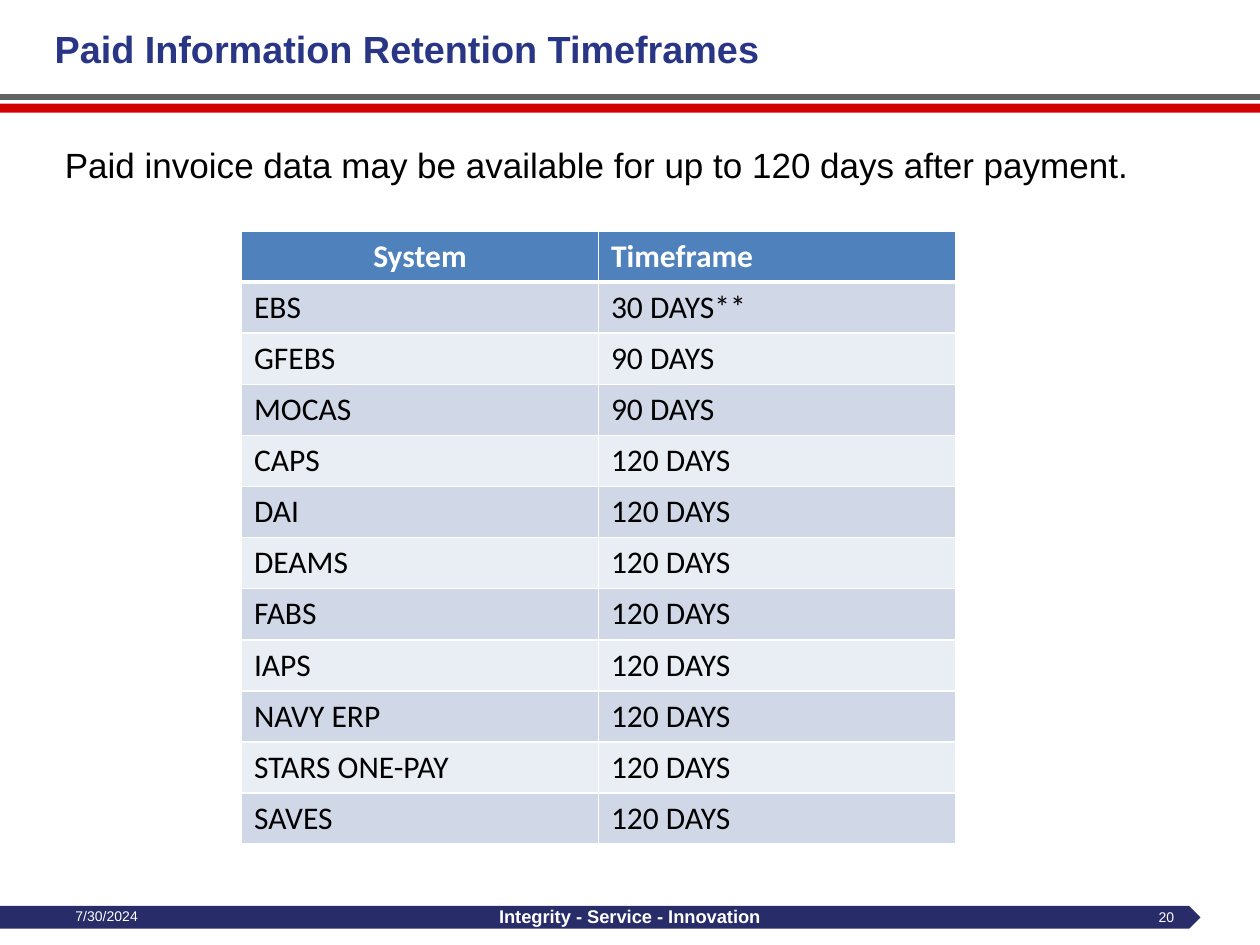
from lxml.etree import SubElement as Sub
from pptx import Presentation
from pptx.dml.color import RGBColor
from pptx.enum.shapes import MSO_CONNECTOR as Link, MSO_SHAPE as Kind
from pptx.enum.text import MSO_ANCHOR as Anchor, MSO_AUTO_SIZE as Fit, PP_ALIGN as Align
from pptx.oxml import parse_xml
from pptx.oxml.ns import nsdecls, qn
from pptx.util import Pt

WHITE = "FFFFFF"
NAVY = "282C69"
RED = "D20000"
GRAY = "626364"
BLUE = "293685"
HEAD = "4F81BD"
BANDS = ("D0D8E8", "E9EDF4")

ROWS = [
    ("System", "Timeframe"),
    ("EBS", "30 DAYS**"),
    ("GFEBS", "90 DAYS"),
    ("MOCAS", "90 DAYS"),
    ("CAPS", "120 DAYS"),
    ("DAI", "120 DAYS"),
    ("DEAMS", "120 DAYS"),
    ("FABS", "120 DAYS"),
    ("IAPS", "120 DAYS"),
    ("NAVY ERP", "120 DAYS"),
    ("STARS ONE-PAY", "120 DAYS"),
    ("SAVES", "120 DAYS"),
]


def color(code):
    return RGBColor.from_string(code)


def edge(tag, width):
    line = parse_xml(f'<a:{tag} {nsdecls("a")} w="{Pt(width)}"/>')
    fill = Sub(line, qn("a:solidFill"))
    Sub(fill, qn("a:srgbClr"), val=WHITE)
    return line


class Deck:
    def __init__(self, wide, high, face):
        self.show = Presentation()
        self.show.slide_width = Pt(wide)
        self.show.slide_height = Pt(high)
        self.slide = self.show.slides.add_slide(self.show.slide_layouts[5])
        self.shapes = self.slide.shapes
        self.face = face

    def style(self, para, text, size, code, bold=False, align=Align.LEFT, face=None):
        para.text = text
        para.alignment = align
        font = para.font
        font.name = face or self.face
        font.size = Pt(size)
        font.bold = bold
        font.color.rgb = color(code)

    def title(self, text, left, top, wide, high, size, code):
        box = self.shapes.title
        box.left, box.top, box.width, box.height = map(Pt, (left, top, wide, high))
        frame = box.text_frame
        frame.auto_size = Fit.NONE
        frame.vertical_anchor = Anchor.MIDDLE
        self.style(frame.paragraphs[0], text, size, code, bold=True)

    def text(self, text, left, top, wide, high, size, code, **look):
        box = self.shapes.add_textbox(*map(Pt, (left, top, wide, high)))
        frame = box.text_frame
        frame.word_wrap = True
        frame.vertical_anchor = Anchor.MIDDLE
        frame.margin_top = frame.margin_bottom = 0
        self.style(frame.paragraphs[0], text, size, code, **look)

    def shape(self, kind, left, top, wide, high, code):
        item = self.shapes.add_shape(kind, *map(Pt, (left, top, wide, high)))
        item.shadow.inherit = False
        item.fill.solid()
        item.fill.fore_color.rgb = color(code)
        item.line.fill.background()

    def rule(self, left, right, top, code, width):
        item = self.shapes.add_connector(Link.STRAIGHT, Pt(left), Pt(top), Pt(right), Pt(top))
        item.line.color.rgb = color(code)
        item.line.width = Pt(width)
        Sub(item._element.spPr, qn("a:effectLst"))

    def table(self, rows, left, top, wide, high, size, face):
        grid = self.shapes.add_table(
            len(rows), len(rows[0]), *map(Pt, (left, top, wide, high))
        ).table
        for row in grid.rows:
            row.height = Pt(high / len(rows))
        for i, row in enumerate(rows):
            for j, text in enumerate(row):
                cell = grid.cell(i, j)
                head = i == 0
                align = Align.CENTER if head and j == 0 else Align.LEFT
                self.style(cell.text_frame.paragraphs[0], text, size,
                           WHITE if head else "000000", head, align, face)
                props = cell._tc.get_or_add_tcPr()
                props.append(edge("lnL", 1))
                props.append(edge("lnR", 1))
                props.append(edge("lnT", 3 if i == 1 else 1))
                props.append(edge("lnB", 3 if head else 1))
                cell.fill.solid()
                cell.fill.fore_color.rgb = color(HEAD if head else BANDS[(i - 1) % 2])


def main():
    deck = Deck(720, 540, "Arial")
    deck.shape(Kind.PENTAGON, 0, 517.7, 686, 13, NAVY)
    deck.shape(Kind.RECTANGLE, -0.5, 59.2, 721, 5.2, RED)
    deck.rule(0, 720, 55.5, GRAY, 3.25)
    deck.title("Paid Information Retention Timeframes", 24, 12.5, 672, 30, 21.6, BLUE)
    deck.text("7/30/2024", 36, 517, 168, 13, 8, WHITE)
    deck.text("Integrity - Service - Innovation", 246, 517, 228, 13, 10.5, WHITE,
              bold=True, align=Align.CENTER)
    deck.text("20", 516, 517.5, 162, 12.5, 8, WHITE, align=Align.RIGHT)
    deck.table(ROWS, 138, 132, 408, 350.4, 18, "Calibri")
    deck.text("Paid invoice data may be available for up to 120 days after payment.",
              30, 78, 630, 31.5, 20, "000000")
    deck.show.save("out.pptx")


if __name__ == "__main__":
    main()
